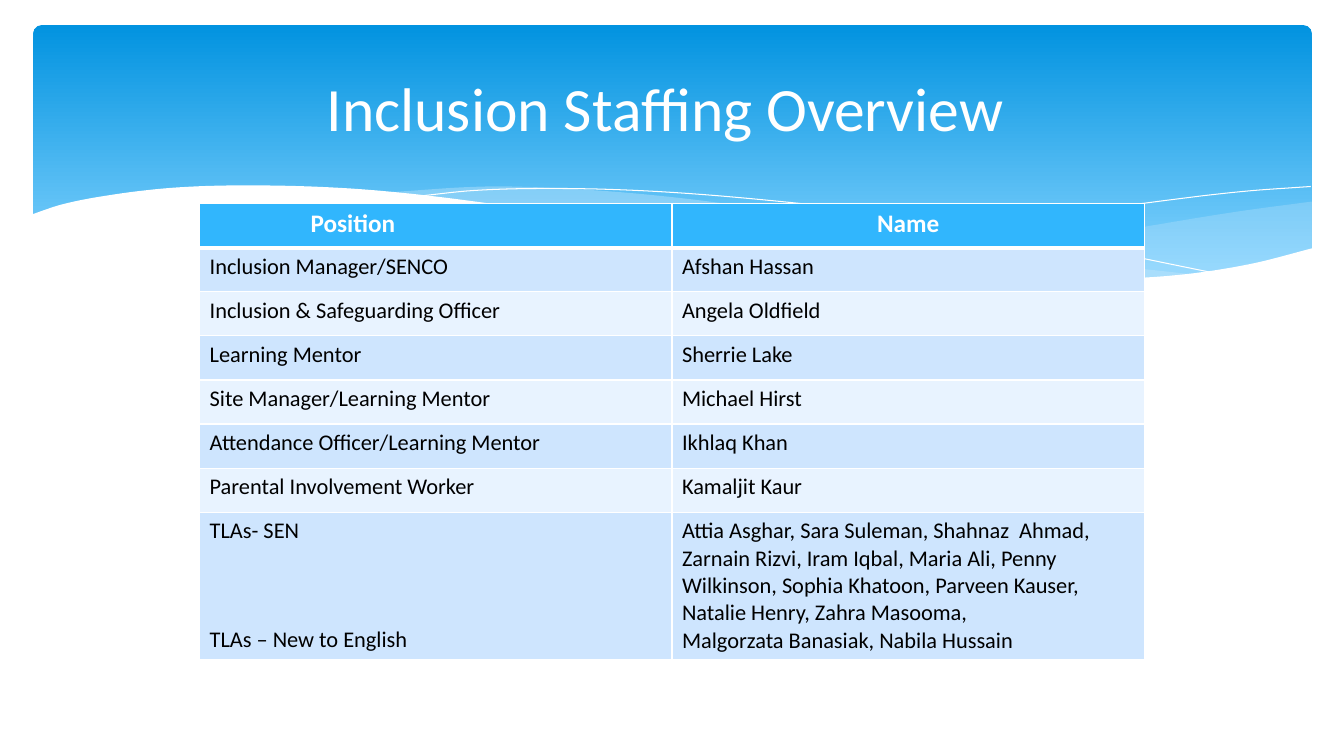
from itertools import pairwise

from lxml.etree import SubElement
from pptx import Presentation
from pptx.dml.color import RGBColor
from pptx.enum.shapes import MSO_SHAPE
from pptx.enum.text import MSO_ANCHOR, PP_ALIGN
from pptx.oxml.ns import qn
from pptx.util import Inches, Pt

WHITE = RGBColor(0xFF, 0xFF, 0xFF)
BLACK = RGBColor(0x00, 0x00, 0x00)
DEEP_BLUE = RGBColor(0x02, 0x93, 0xE0)
SKY_BLUE = RGBColor(0x83, 0xD3, 0xFE)
HEADER_BLUE = RGBColor(0x31, 0xB6, 0xFD)
WAVE_BLUE = RGBColor(0xC6, 0xE7, 0xFC)
BAND_DARK = RGBColor(0xCE, 0xE5, 0xFE)
BAND_LIGHT = RGBColor(0xE8, 0xF3, 0xFF)

# Knots of the wave edges, in inches; smooth() bends a curve through them
RIGHT_WAVE_TOP = [(13.01, 2), (12.27, 2.1), (11.47, 2.23), (10.38, 2.42),
                  (9.41, 2.57), (8.82, 2.65)]
RIGHT_WAVE_BOTTOM = [(8.82, 2.65), (9.58, 2.72), (10.25, 2.77), (10.99, 2.78),
                     (11.74, 2.73), (12.38, 2.63), (13.01, 2.47)]
MIDDLE_WAVE_TOP = [(11.9, 2.73), (10.76, 2.6), (9.41, 2.4), (8.39, 2.22),
                   (7.4, 2.05), (6.52, 1.94), (5.6, 1.87), (4.82, 1.85),
                   (3.82, 1.91)]
MIDDLE_WAVE_BOTTOM = [(3.82, 1.91), (4.83, 2.03), (5.99, 2.22), (7.55, 2.48),
                      (8.87, 2.66), (9.81, 2.75), (10.76, 2.78), (11.9, 2.73)]
FALLING_LINE = [(4.12, 1.95), (4.7, 1.89), (5.55, 1.87), (6.52, 1.9),
                (7.75, 2), (8.86, 2.13), (10.14, 2.33), (12.1, 2.72)]
RISING_LINE = [(8.18, 2.57), (9.27, 2.35), (10.35, 2.16), (11.55, 1.99),
               (12.32, 1.9), (13, 1.85)]
WHITE_WAVE_TOP = [(0.31, 2.13), (0.61, 2.03), (1.13, 1.93), (1.76, 1.86),
                  (2.58, 1.84), (3.61, 1.88), (4.86, 2.02), (5.96, 2.2),
                  (7.4, 2.45), (8.63, 2.62), (9.69, 2.72), (10.78, 2.77),
                  (11.67, 2.73), (12.4, 2.62), (13.03, 2.46)]
WHITE_WAVE_CORNERS = [(13.03, 3.29), (0.31, 3.29)]

# Staff: plain rows hold one paragraph per cell, the last row holds several
HEADINGS = ("Position", "Name")
STAFF = [
    ("Inclusion Manager/SENCO", "Afshan Hassan"),
    ("Inclusion & Safeguarding Officer", "Angela Oldfield"),
    ("Learning Mentor", "Sherrie Lake"),
    ("Site Manager/Learning Mentor", "Michael Hirst"),
    ("Attendance Officer/Learning Mentor", "Ikhlaq Khan"),
    ("Parental Involvement Worker", "Kamaljit Kaur"),
]
ASSISTANTS = (
    "TLAs- SEN\nTLAs – New to English",
    "Attia Asghar, Sara Suleman, Shahnaz  Ahmad, Zarnain Rizvi, Iram Iqbal, "
    "Maria Ali, Penny Wilkinson, Sophia Khatoon, Parveen Kauser, "
    "Natalie Henry, Zahra Masooma,\nMalgorzata Banasiak, Nabila Hussain",
)


def smooth(knots, steps=8):
    """Return points on a cubic Hermite curve through the knots."""
    secants = [(y2 - y1) / (x2 - x1) for (x1, y1), (x2, y2) in pairwise(knots)]
    slopes = [secants[0]]
    slopes += [(before + after) / 2 for before, after in pairwise(secants)]
    slopes.append(secants[-1])
    points = [knots[0]]
    ends = zip(pairwise(knots), pairwise(slopes))
    for ((x1, y1), (x2, y2)), (slope1, slope2) in ends:
        width = x2 - x1
        for step in range(1, steps + 1):
            t = step / steps
            blend = t * t * (3 - 2 * t)
            bend = t * (1 - t) * ((1 - t) * slope1 - t * slope2)
            points.append((x1 + t * width, y1 + blend * (y2 - y1) + bend * width))
    return points


class SlideBuilder:
    font = "Calibri"
    title_size, header_size, body_size = 44, 18, 16
    thin_border, thick_border = Pt(1), Pt(3)

    def __init__(self, slide):
        self.shapes = slide.shapes

    def format_text(self, para, size, color, bold=False):
        for span in para.runs:
            span.font.name = self.font
            span.font.size = Pt(size)
            span.font.bold = bold
            span.font.color.rgb = color

    def gradient_panel(self, left, top, width, height, colors):
        panel = self.shapes.add_shape(
            MSO_SHAPE.ROUNDED_RECTANGLE,
            Inches(left), Inches(top), Inches(width), Inches(height))
        panel.adjustments[0] = 0.03
        panel.shadow.inherit = False
        panel.line.fill.background()
        panel.fill.gradient()
        panel.fill.gradient_angle = 270
        for stop, color, position in zip(panel.fill.gradient_stops, colors, (0, 0.9)):
            stop.color.rgb = color
            stop.position = position

    def outline(self, points, closed):
        # The builder rounds to whole units, so it is given EMU
        start, *others = [(Inches(x), Inches(y)) for x, y in points]
        builder = self.shapes.build_freeform(*start)
        builder.add_line_segments(others, close=closed)
        shape = builder.convert_to_shape()
        shape.shadow.inherit = False
        return shape

    def wave(self, points, color, opacity=100):
        shape = self.outline(points, closed=True)
        shape.line.fill.background()
        shape.fill.solid()
        shape.fill.fore_color.rgb = color
        tint = shape._element.spPr.find(".//" + qn("a:srgbClr"))
        SubElement(tint, qn("a:alpha"), val=str(opacity * 1000))

    def curve(self, points, color):
        shape = self.outline(points, closed=False)
        shape.fill.background()
        shape.line.color.rgb = color
        shape.line.width = Pt(0)

    def title(self, text, left, top, width, height):
        box = self.shapes.title
        box.left, box.top = Inches(left), Inches(top)
        box.width, box.height = Inches(width), Inches(height)
        box.text_frame.text = text
        box.text_frame.vertical_anchor = MSO_ANCHOR.MIDDLE
        para = box.text_frame.paragraphs[0]
        para.alignment = PP_ALIGN.CENTER
        self.format_text(para, self.title_size, WHITE)
        # Bring the title in front of the backdrop
        self.shapes._spTree.append(box._element)

    def border(self, cell, top, bottom):
        properties = cell._tc.get_or_add_tcPr()
        sides = {"L": self.thin_border, "R": self.thin_border, "T": top, "B": bottom}
        for side, width in sides.items():
            line = SubElement(properties, qn("a:ln" + side), w=str(width))
            fill = SubElement(line, qn("a:solidFill"))
            SubElement(fill, qn("a:srgbClr"), val=str(WHITE))

    def cell(self, cell, text, fill, size, color, bold, top, bottom):
        self.border(cell, top, bottom)
        cell.fill.solid()
        cell.fill.fore_color.rgb = fill
        cell.text_frame.text = text
        for para in cell.text_frame.paragraphs:
            self.format_text(para, size, color, bold)

    def table(self, rows, left, top, width, row_height, last_height):
        height = row_height * (len(rows) - 1) + last_height
        table = self.shapes.add_table(
            len(rows), len(rows[0]), Inches(left), Inches(top),
            Inches(width), Inches(height)).table
        table.first_row = table.horz_banding = False
        thin, thick = self.thin_border, self.thick_border
        header_style = (HEADER_BLUE, self.header_size, WHITE, True, thin, thick)
        for number, texts in enumerate(rows):
            table.rows[number].height = Inches(row_height)
            band = BAND_DARK if number % 2 else BAND_LIGHT
            above = thick if number == 1 else thin
            body_style = (band, self.body_size, BLACK, False, above, thin)
            style = body_style if number else header_style
            for column, text in enumerate(texts):
                self.cell(table.cell(number, column), text, *style)
        table.rows[len(rows) - 1].height = Inches(last_height)
        return table


def main():
    deck = Presentation()
    deck.slide_width, deck.slide_height = Inches(13.33), Inches(7.5)
    page = SlideBuilder(deck.slides.add_slide(deck.slide_layouts[5]))

    # Backdrop: blue panel, its waves and the white wave along its foot
    page.gradient_panel(0.33, 0.25, 12.68, 2.7, (DEEP_BLUE, SKY_BLUE))
    page.wave(smooth(RIGHT_WAVE_TOP) + smooth(RIGHT_WAVE_BOTTOM), WAVE_BLUE, 29)
    page.wave(smooth(MIDDLE_WAVE_TOP) + smooth(MIDDLE_WAVE_BOTTOM), WAVE_BLUE, 40)
    for knots in (FALLING_LINE, RISING_LINE):
        page.curve(smooth(knots), WHITE)
    page.wave(smooth(WHITE_WAVE_TOP) + WHITE_WAVE_CORNERS, WHITE)

    # Title
    page.title("Inclusion Staffing Overview ", 0.67, 0.37, 12, 1.37)

    # Staff table
    table = page.table([HEADINGS, *STAFF, ASSISTANTS], 1.98, 2.02, 9.37, 7 / 16, 1.41)
    position_heading, name_heading = table.rows[0].cells
    position_heading.margin_left = Inches(1.1)
    name_heading.text_frame.paragraphs[0].alignment = PP_ALIGN.CENTER
    # Set the second role level with the last line of names
    second_role = table.cell(len(STAFF) + 1, 0).text_frame.paragraphs[1]
    second_role.space_before = Pt(58.5)

    deck.save("out.pptx")


if __name__ == "__main__":
    main()
